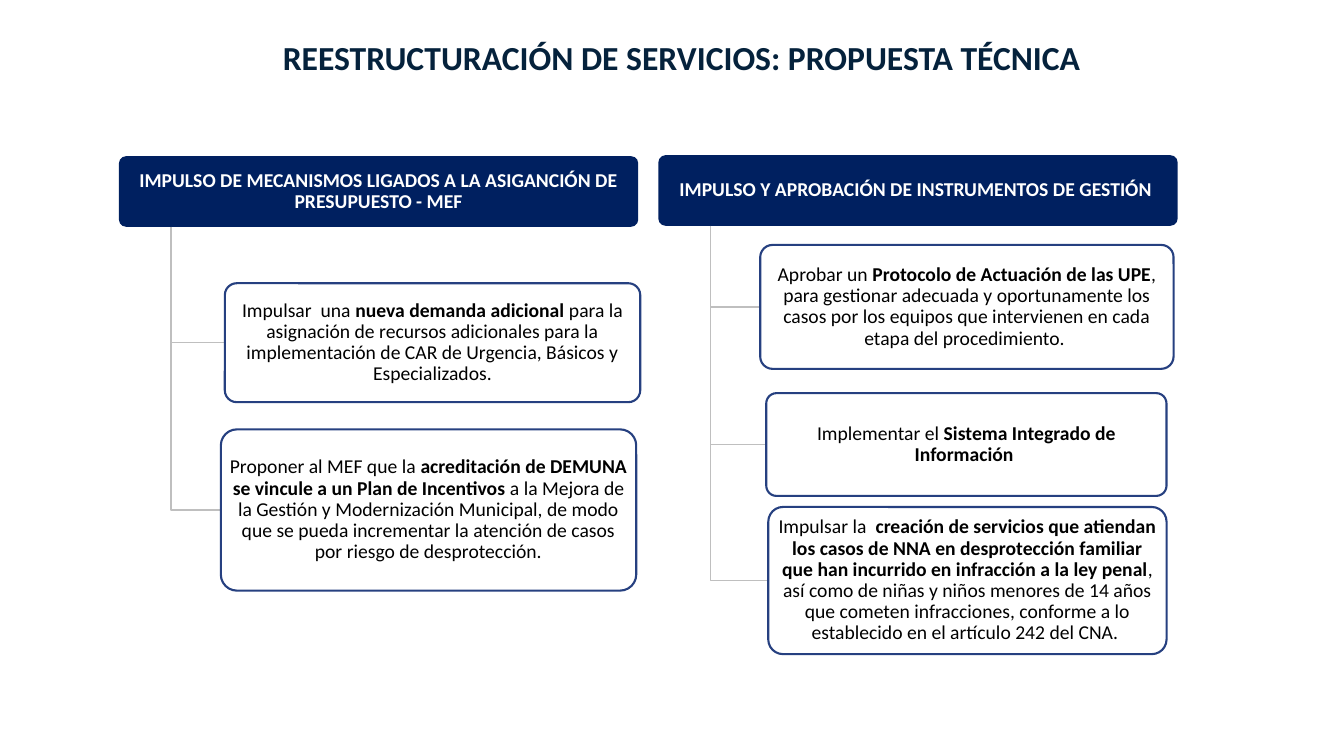
from dataclasses import dataclass

import lxml.etree
import pptx
import pptx.dml.color
import pptx.enum.shapes
import pptx.enum.text
import pptx.oxml.ns
import pptx.shapes.autoshape
import pptx.slide
import pptx.text.text
import pptx.util

CELL = pptx.util.Inches(0.1)  # grid: 133.3 columns by 75 rows
COLUMNS, ROWS = 133.3, 75
FONT = "Calibri"
NAVY, OUTLINE, BRANCH, TITLE = "002060", "264080", "BFBFBF", "05223C"
WHITE, BLACK = "FFFFFF", "000000"
CORNER = 0.1
TRUNK_SHARE = 0.1  # trunk position along the header's width


@dataclass(frozen=True)
class Area:
    """A rectangle in grid columns and rows."""
    left: float
    top: float
    width: float
    height: float

    @property
    def bottom(self) -> float:
        return self.top + self.height

    @property
    def middle(self) -> float:
        return self.top + self.height / 2


@dataclass(frozen=True)
class Span:
    text: str
    bold: bool = False


@dataclass(frozen=True)
class Card:
    area: Area
    spans: tuple[Span, ...]


@dataclass(frozen=True)
class Branch:
    header: Card
    actions: tuple[Card, ...]


BRANCHES = (
    Branch(
        Card(Area(11.8, 15.5, 51.5, 7), (
            Span("IMPULSO DE MECANISMOS LIGADOS A LA ASIGANCIÓN DE PRESUPUESTO - MEF", True),
        )),
        (
            Card(Area(22.3, 28.1, 41.2, 11.8), (
                Span("Impulsar  una "),
                Span("nueva demanda adicional ", True),
                Span("para la asignación de recursos adicionales para la implementación "
                     "de CAR de Urgencia, Básicos y Especializados."),
            )),
            Card(Area(21.9, 42.6, 41.2, 16), (
                Span("Proponer al MEF que la "),
                Span("acreditación de DEMUNA se vincule a un Plan de Incentivos ", True),
                Span("a la Mejora de la Gestión y Modernización Municipal, de modo que se "
                     "pueda incrementar la atención de casos por riesgo de desprotección."),
            )),
        ),
    ),
    Branch(
        Card(Area(65.3, 15.4, 51.5, 7), (
            Span("IMPULSO Y APROBACIÓN DE INSTRUMENTOS DE GESTIÓN ", True),
        )),
        (
            Card(Area(75.4, 24.3, 41, 12.3), (
                Span("Aprobar un "),
                Span("Protocolo de Actuación de las UPE", True),
                Span(", para gestionar adecuada y oportunamente los casos por los equipos "
                     "que intervienen en cada etapa del procedimiento. "),
            )),
            Card(Area(76, 39, 39.7, 10.2), (
                Span("Implementar el "),
                Span("Sistema Integrado de Información ", True),
            )),
            Card(Area(76.2, 50.3, 39.5, 14.6), (
                Span("Impulsar la  "),
                Span("creación de servicios que atiendan los casos de NNA en desprotección "
                     "familiar que han incurrido en infracción a la ley penal", True),
                Span(", así como de niñas y niños menores de 14 años que cometen infracciones, "
                     "conforme a lo establecido en el artículo 242 del CNA. "),
            )),
        ),
    ),
)


def grid(cells: float) -> int:
    return round(cells * CELL)


def color(value: str) -> pptx.dml.color.RGBColor:
    return pptx.dml.color.RGBColor.from_string(value)


def format_paragraph(para: pptx.text.text._Paragraph, size: float, ink: str) -> None:
    para.alignment = pptx.enum.text.PP_ALIGN.CENTER
    para.line_spacing = 0.9
    para.font.name = FONT
    para.font.size = pptx.util.Pt(size)
    para.font.color.rgb = color(ink)


def add_title(page: pptx.slide.Slide, area: Area, text: str) -> None:
    title = page.shapes.title
    title.left, title.top = grid(area.left), grid(area.top)
    title.width, title.height = grid(area.width), grid(area.height)
    frame = title.text_frame
    frame.text = text
    frame.word_wrap = True
    frame.auto_size = pptx.enum.text.MSO_AUTO_SIZE.NONE
    frame.vertical_anchor = pptx.enum.text.MSO_ANCHOR.MIDDLE
    format_paragraph(frame.paragraphs[0], 24, TITLE)
    frame.paragraphs[0].font.bold = True


def add_card(page: pptx.slide.Slide, card: Card, fill: str,
             ink: str) -> pptx.shapes.autoshape.Shape:
    area = card.area
    box = page.shapes.add_shape(
        pptx.enum.shapes.MSO_SHAPE.ROUNDED_RECTANGLE,
        grid(area.left), grid(area.top), grid(area.width), grid(area.height))
    box.adjustments[0] = CORNER
    box.shadow.inherit = False
    box.fill.solid()
    box.fill.fore_color.rgb = color(fill)
    box.line.fill.background()
    frame = box.text_frame
    frame.word_wrap = True
    frame.vertical_anchor = pptx.enum.text.MSO_ANCHOR.MIDDLE
    frame.margin_left = frame.margin_right = grid(0.3)
    frame.margin_top = frame.margin_bottom = grid(0.2)
    para = frame.paragraphs[0]
    format_paragraph(para, 14, ink)
    for span in card.spans:
        run = para.add_run()
        run.text = span.text
        run.font.bold = span.bold
    return box


def add_action(page: pptx.slide.Slide, card: Card) -> None:
    """Draw an outlined card with a 90% opaque white fill."""
    box = add_card(page, card, WHITE, BLACK)
    box.line.color.rgb = color(OUTLINE)
    box.line.width = pptx.util.Pt(1.5)
    fill = box._element.spPr.find(pptx.oxml.ns.qn("a:solidFill"))
    lxml.etree.SubElement(fill[0], pptx.oxml.ns.qn("a:alpha"), val="90000")


def add_elbow(page: pptx.slide.Slide, header: Area, action: Area) -> None:
    """Draw the line down from the header and across to the action's left edge."""
    trunk = grid(header.left + TRUNK_SHARE * header.width)
    middle = grid(action.middle)
    builder = page.shapes.build_freeform(trunk, grid(header.bottom))
    builder.add_line_segments([(trunk, middle), (grid(action.left), middle)], close=False)
    elbow = builder.convert_to_shape()
    elbow.shadow.inherit = False
    elbow.fill.background()
    elbow.line.color.rgb = color(BRANCH)
    elbow.line.width = pptx.util.Pt(1)


def main() -> None:
    deck = pptx.Presentation()
    deck.slide_width, deck.slide_height = grid(COLUMNS), grid(ROWS)
    page = deck.slides.add_slide(deck.slide_layouts.get_by_name("Title Only"))
    add_title(page, Area(23.7, 1.4, 87.8, 9.1),
              "REESTRUCTURACIÓN DE SERVICIOS: PROPUESTA TÉCNICA")
    for branch in BRANCHES:
        add_card(page, branch.header, NAVY, WHITE)
        for action in branch.actions:
            add_elbow(page, branch.header.area, action.area)
            add_action(page, action)
    deck.save("out.pptx")


if __name__ == "__main__":
    main()
